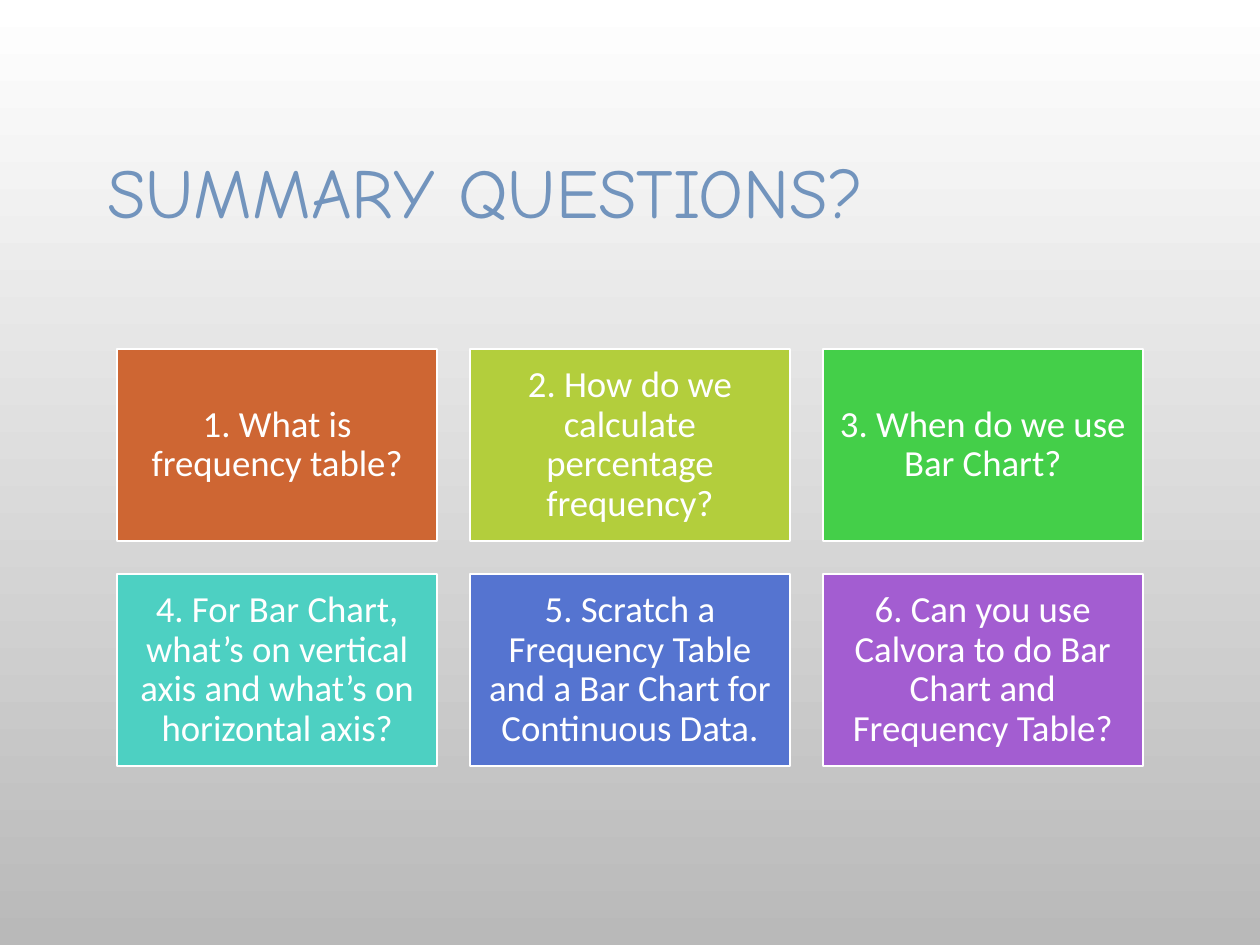
from pptx import Presentation
from pptx.dml.color import RGBColor
from pptx.enum.shapes import MSO_SHAPE
from pptx.enum.text import MSO_ANCHOR, MSO_AUTO_SIZE, PP_ALIGN
from pptx.util import Inches, Pt

WHITE = RGBColor(0xFF, 0xFF, 0xFF)
GREY = RGBColor(0xB9, 0xB9, 0xB9)
TITLE_BLUE = RGBColor(0x72, 0x94, 0xBD)
ORANGE = RGBColor(0xCE, 0x66, 0x33)
LIME = RGBColor(0xB3, 0xCE, 0x3C)
GREEN = RGBColor(0x44, 0xCF, 0x49)
TEAL = RGBColor(0x4D, 0xD0, 0xC2)
BLUE = RGBColor(0x55, 0x74, 0xD0)
PURPLE = RGBColor(0xA3, 0x5D, 0xD1)

COLUMNS = 3
GAP = Inches(0.26)
CARD_INSET = Inches(0.09)
QUESTIONS = [
    ("1. What is frequency table?", ORANGE),
    ("2. How do we calculate percentage frequency?", LIME),
    ("3. When do we use Bar Chart?", GREEN),
    ("4. For Bar Chart, what’s on vertical axis and what’s on horizontal axis?", TEAL),
    ("5. Scratch a Frequency Table and a Bar Chart for Continuous Data.", BLUE),
    ("6. Can you use Calvora to do Bar Chart and Frequency Table?", PURPLE),
]


def write_text(shape, text, font_name, size, color, align):
    frame = shape.text_frame
    frame.text = text
    frame.word_wrap = True
    frame.auto_size = MSO_AUTO_SIZE.NONE
    frame.vertical_anchor = MSO_ANCHOR.MIDDLE
    para = frame.paragraphs[0]
    para.alignment = align
    para.line_spacing = 0.9
    font = para.runs[0].font
    font.name = font_name
    font.size = Pt(size)
    font.color.rgb = color


def paint_background(page):
    fill = page.background.fill
    fill.gradient()
    fill.gradient_angle = 270
    for stop, color in zip(fill.gradient_stops, (WHITE, GREY)):
        stop.color.rgb = color


def place_title(page, left, top, width, height):
    title = page.shapes.title
    title.left, title.top, title.width, title.height = left, top, width, height
    write_text(title, "SUMMARY QUESTIONS?", "Comic Neue", 40, TITLE_BLUE, PP_ALIGN.LEFT)


def add_card(page, text, color, left, top, width, height):
    card = page.shapes.add_shape(MSO_SHAPE.RECTANGLE, left, top, width, height)
    card.shadow.inherit = False
    card.fill.solid()
    card.fill.fore_color.rgb = color
    card.line.color.rgb = WHITE
    card.line.width = Pt(1.25)
    frame = card.text_frame
    frame.margin_left = frame.margin_right = CARD_INSET
    frame.margin_top = frame.margin_bottom = CARD_INSET
    write_text(card, text, "Calibri", 21, WHITE, PP_ALIGN.CENTER)


def add_question_grid(page, left, top, width, height):
    rows = len(QUESTIONS) // COLUMNS
    card_width = (width - (COLUMNS - 1) * GAP) // COLUMNS
    card_height = (height - (rows - 1) * GAP) // rows
    for index, (text, color) in enumerate(QUESTIONS):
        row, column = divmod(index, COLUMNS)
        add_card(
            page, text, color,
            left + column * (card_width + GAP),
            top + row * (card_height + GAP),
            card_width, card_height,
        )


def main():
    deck = Presentation()
    deck.slide_width, deck.slide_height = Inches(10), Inches(7.5)
    page = deck.slides.add_slide(deck.slide_layouts[5])
    paint_background(page)
    place_title(page, Inches(0.75), Inches(0.68), Inches(8.5), Inches(1.75))
    add_question_grid(page, Inches(0.93), Inches(2.77), Inches(8.14), Inches(3.31))
    deck.save("out.pptx")


if __name__ == "__main__":
    main()
